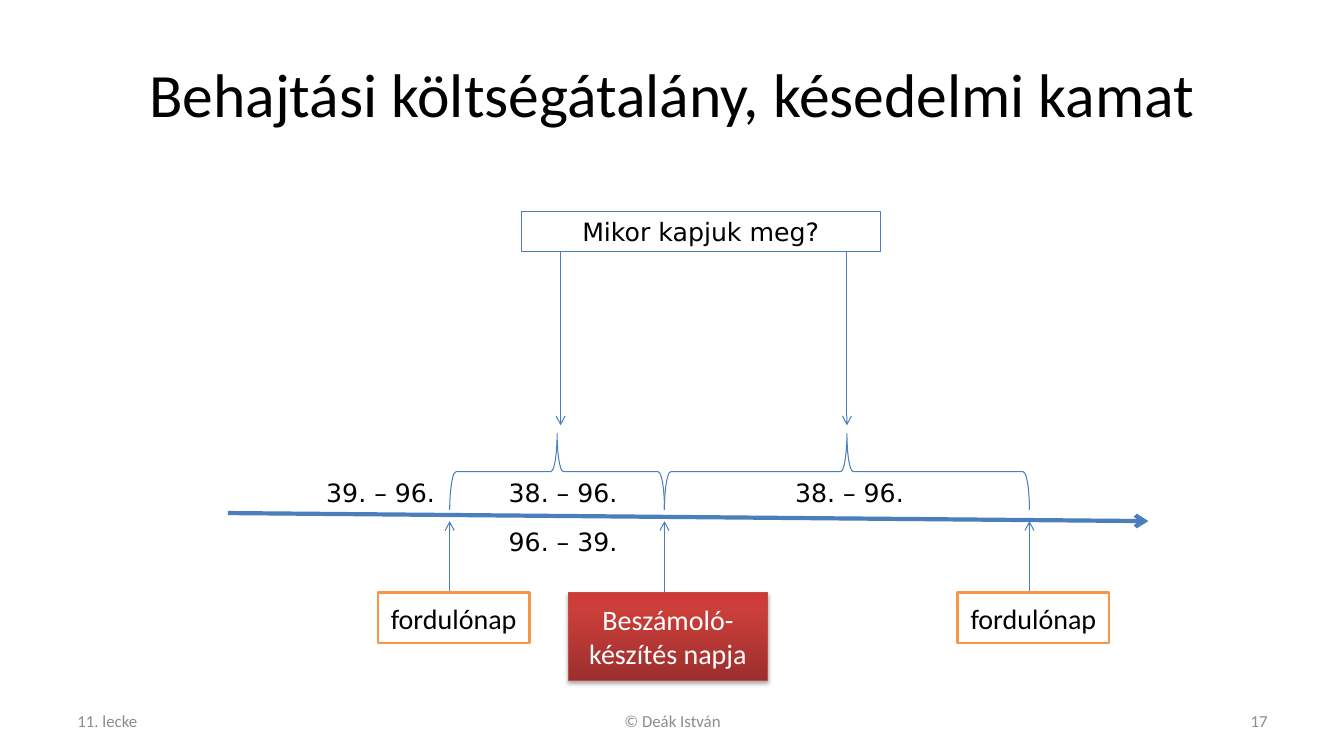
from copy import deepcopy

from lxml import etree
from pptx import Presentation
from pptx.dml.color import RGBColor
from pptx.enum.shapes import MSO_CONNECTOR, MSO_SHAPE
from pptx.enum.text import MSO_ANCHOR, MSO_AUTO_SIZE, PP_ALIGN
from pptx.oxml import parse_xml
from pptx.oxml.ns import nsdecls, qn
from pptx.util import Inches, Pt

RECT, BRACE = MSO_SHAPE.RECTANGLE, MSO_SHAPE.LEFT_BRACE
STRAIGHT = MSO_CONNECTOR.STRAIGHT
LEFT, CENTER, RIGHT = PP_ALIGN.LEFT, PP_ALIGN.CENTER, PP_ALIGN.RIGHT
TOP, MIDDLE = MSO_ANCHOR.TOP, MSO_ANCHOR.MIDDLE
FIT_SHAPE = MSO_AUTO_SIZE.SHAPE_TO_FIT_TEXT

SANS, LABEL_FONT = "Calibri", "DejaVu Sans"
COLORS = {
    "text": "000000", "white": "FFFFFF", "footer": "8C8C8C",
    "blue": "4B7EBC", "orange": "F79646", "red_line": "BF4C48",
    "red_dark": "9C2F2D", "red": "CB3E3A", "red_light": "CE3B37",
}


def rgb(name):
    return RGBColor.from_string(COLORS[name])


def set_text(sp, text, font=SANS, size=20, color="text", align=CENTER,
             anchor=MIDDLE, wrap=True, grow=False):
    tf = sp.text_frame
    tf.word_wrap = wrap
    tf.vertical_anchor = anchor
    if grow:
        tf.auto_size = FIT_SHAPE
    p = tf.paragraphs[0]
    p.alignment = align
    r = p.add_run()
    r.text = text
    r.font.name, r.font.size = font, Pt(size)
    r.font.color.rgb = rgb(color)


class TimelineSlide:
    def __init__(self, prs):
        self.s = prs.slides.add_slide(prs.slide_layouts[5])

    def title(self, text, x, y, w, h):
        sp = self.s.shapes.title
        sp.left, sp.top = Inches(x), Inches(y)
        sp.width, sp.height = Inches(w), Inches(h)
        set_text(sp, text, size=44)

    def text(self, text, x, y, w, h, **fmt):
        sp = self.s.shapes.add_textbox(Inches(x), Inches(y), Inches(w), Inches(h))
        set_text(sp, text, **fmt)

    def shape(self, kind, x, y, w, h, fill=None, line="blue", weight=0.75):
        sp = self.s.shapes.add_shape(kind, Inches(x), Inches(y), Inches(w), Inches(h))
        sp.shadow.inherit = False
        if fill:
            sp.fill.solid()
            sp.fill.fore_color.rgb = rgb(fill)
        else:
            sp.fill.background()
        sp.line.color.rgb = rgb(line)
        sp.line.width = Pt(weight)
        return sp

    def box(self, text, x, y, w, h, fill=None, line="blue", weight=0.75, **fmt):
        sp = self.shape(RECT, x, y, w, h, fill, line, weight)
        set_text(sp, text, **fmt)
        return sp

    def raised_box(self, text, x, y, w, h):
        """Red box with a vertical three-stop gradient and a soft shadow."""
        sp = self.box(text, x, y, w, h, line="red_line", color="white")
        sp.fill.gradient()
        sp.fill.gradient_angle = 90
        gs_list = sp._element.spPr.find(".//" + qn("a:gsLst"))
        gs_list.append(deepcopy(gs_list[-1]))
        stops = ((0, "red_dark"), (0.8, "red"), (1, "red_light"))
        for stop, (position, color) in zip(sp.fill.gradient_stops, stops):
            stop.position = position
            stop.color.rgb = rgb(color)
        sp._element.spPr.find(qn("a:effectLst")).append(parse_xml(
            f'<a:outerShdw {nsdecls("a")} blurRad="{Pt(3.1)}" dist="{Pt(1.8)}" '
            'dir="5400000" rotWithShape="0"><a:srgbClr val="000000">'
            '<a:alpha val="35000"/></a:srgbClr></a:outerShdw>'))

    def arrow(self, x1, y1, x2, y2, weight=0.75):
        c = self.s.shapes.add_connector(
            STRAIGHT, Inches(x1), Inches(y1), Inches(x2), Inches(y2))
        c.line.color.rgb = rgb("blue")
        c.line.width = Pt(weight)
        etree.SubElement(c.line._ln, qn("a:tailEnd"), type="arrow")
        etree.SubElement(c._element.spPr, qn("a:effectLst"))

    def brace(self, start, end, y, depth):
        """Upward brace over start..end, centred on height y."""
        span = end - start
        sp = self.shape(BRACE, (start + end - depth) / 2, y - span / 2, depth, span)
        sp.rotation = 90


def main():
    prs = Presentation()
    prs.slide_width, prs.slide_height = Inches(13.33), Inches(7.5)
    slide = TimelineSlide(prs)
    slide.title("Behajtási költségátalány, késedelmi kamat", 0.67, 0.3, 12, 1.25)

    for text, x, w, align in (("11. lecke", 0.67, 3.11, LEFT),
                              ("© Deák István", 4.56, 4.22, CENTER),
                              ("17", 9.56, 3.11, RIGHT)):
        slide.text(text, x, 6.95, w, 0.4, size=12, color="footer", align=align)

    slide.arrow(2.26, 5.09, 11.39, 5.17, weight=3)
    dates = (4.46, 6.59, 10.21)
    for x in dates:
        slide.arrow(x, 5.88, x, 5.17)
    for x in (3.75, 9.5):
        slide.box("fordulónap", x, 5.88, 1.5, 0.5, "white", "orange", 2)
    slide.raised_box("Beszámoló-készítés napja", 5.64, 5.88, 1.97, 0.87)

    label = {"font": LABEL_FONT, "size": 18, "anchor": TOP, "grow": True}
    slide.box("Mikor kapjuk meg?", 5.17, 2.1, 3.56, 0.4, **label)
    for x in (5.56, 8.4):
        slide.arrow(x, 2.5, x, 4.22)
    for start, end in zip(dates, dates[1:]):
        slide.brace(start, end, 4.68, 0.76)

    for text, x, y in (("39. – 96.", 3.09, 4.69), ("38. – 96.", 4.9, 4.69),
                       ("96. – 39.", 4.9, 5.17), ("38. – 96.", 7.74, 4.69)):
        slide.text(text, x, y, 1.37, 0.4, wrap=False, **label)

    prs.save("out.pptx")


if __name__ == "__main__":
    main()
